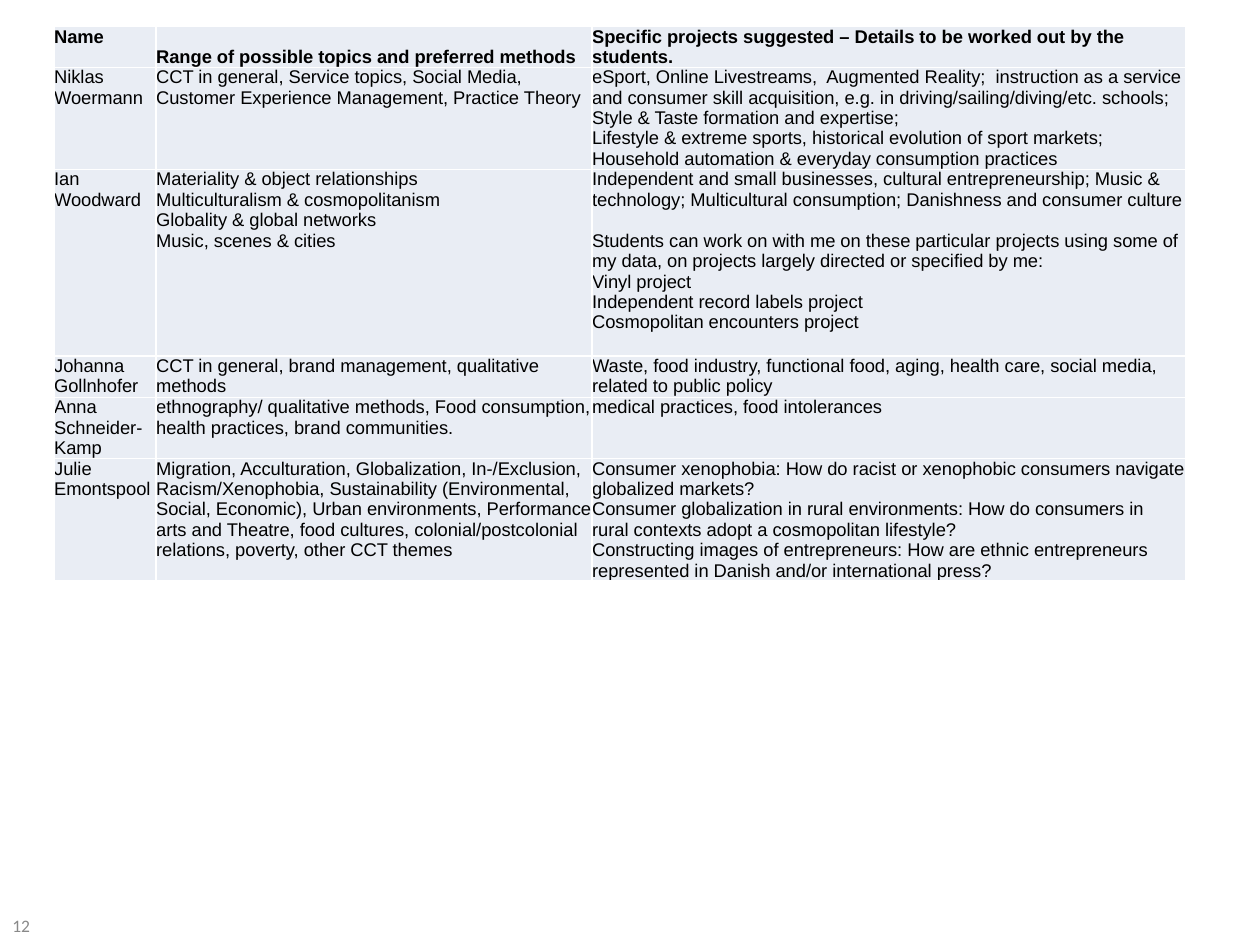
from lxml import etree
from pptx import Presentation
from pptx import util as u
from pptx.dml import color
from pptx.enum import text
from pptx.oxml import ns

COLORS = {"cell": "E9EDF4", "border": "FFFFFF", "text": "000000", "number": "898989"}
COLUMN_WIDTHS = [0.81, 3.46, 4.71]
ROW_HEIGHTS = [0.32, 0.81, 1.48, 0.33, 0.48, 0.97]
ROWS = [
    ("Name",
     "Range of possible topics and preferred methods",
     "Specific projects suggested – Details to be worked out by the students."),
    ("Niklas Woermann",
     "CCT in general, Service topics, Social Media,\v"
     "Customer Experience Management, Practice Theory",
     "eSport, Online Livestreams,  Augmented Reality;  instruction as a service and consumer "
     "skill acquisition, e.g. in driving/sailing/diving/etc. schools;  Style & Taste formation "
     "and expertise;\v"
     "Lifestyle & extreme sports, historical evolution of sport markets;\v"
     "Household automation & everyday consumption practices"),
    ("Ian Woodward",
     "Materiality & object relationships\vMulticulturalism & cosmopolitanism\v"
     "Globality & global networks\vMusic, scenes & cities",
     "Independent and small businesses, cultural entrepreneurship; Music & technology; "
     "Multicultural consumption; Danishness and consumer culture\n"
     "Students can work on with me on these particular projects using some of my data, "
     "on projects largely directed or specified by me:\v"
     "Vinyl project\vIndependent record labels project\vCosmopolitan encounters project"),
    ("Johanna Gollnhofer",
     "CCT in general, brand management, qualitative methods",
     "Waste, food industry, functional food, aging, health care, social media, "
     "related to public policy"),
    ("Anna Schneider-Kamp",
     "ethnography/ qualitative methods, Food consumption, health practices, brand communities.",
     "medical practices, food intolerances"),
    ("Julie Emontspool",
     "Migration, Acculturation, Globalization, In-/Exclusion, Racism/Xenophobia, Sustainability "
     "(Environmental, Social, Economic), Urban environments, Performance arts and Theatre, food "
     "cultures, colonial/postcolonial relations, poverty, other CCT themes",
     "Consumer xenophobia: How do racist or xenophobic consumers navigate globalized markets?\v"
     "Consumer globalization in rural environments: How do consumers in rural contexts adopt "
     "a cosmopolitan lifestyle?\v"
     "Constructing images of entrepreneurs: How are ethnic entrepreneurs represented in Danish "
     "and/or international press?"),
]


def add_run(paragraph, words, font_name, size, color_name, bold=False):
    run = paragraph.add_run()
    run.text = words
    run.font.name = font_name
    run.font.size = u.Pt(size)
    run.font.bold = bold
    run.font.color.rgb = color.RGBColor.from_string(COLORS[color_name])


def add_borders(cell):
    properties = cell._tc.get_or_add_tcPr()
    for side in ("lnL", "lnR", "lnT", "lnB"):
        line = etree.SubElement(properties, ns.qn(f"a:{side}"), w=str(u.Pt(1)))
        fill = etree.SubElement(line, ns.qn("a:solidFill"))
        etree.SubElement(fill, ns.qn("a:srgbClr"), val=COLORS["border"])


presentation = Presentation()
presentation.slide_width = u.Inches(10)
presentation.slide_height = u.Inches(7.5)
slide = presentation.slides.add_slide(presentation.slide_layouts[6])

table = slide.shapes.add_table(
    len(ROWS), len(COLUMN_WIDTHS), u.Inches(0.43), u.Inches(0.21),
    u.Inches(sum(COLUMN_WIDTHS)), u.Inches(sum(ROW_HEIGHTS))).table
for column, width in zip(table.columns, COLUMN_WIDTHS):
    column.width = u.Inches(width)

for row_index, (row, height, contents) in enumerate(zip(table.rows, ROW_HEIGHTS, ROWS)):
    row.height = u.Inches(height)
    is_header = row_index == 0
    for column_index, (cell, content) in enumerate(zip(row.cells, contents)):
        cell.margin_left = cell.margin_right = cell.margin_top = cell.margin_bottom = 0
        bottom = is_header and column_index > 0
        cell.vertical_anchor = text.MSO_ANCHOR.BOTTOM if bottom else text.MSO_ANCHOR.TOP
        add_borders(cell)
        cell.fill.solid()
        cell.fill.fore_color.rgb = color.RGBColor.from_string(COLORS["cell"])
        for block_index, block in enumerate(content.split("\n")):
            if block_index == 0:
                paragraph = cell.text_frame.paragraphs[0]
            else:
                paragraph = cell.text_frame.add_paragraph()
                paragraph.space_before = u.Pt(11.75)
            for line_index, words in enumerate(block.split("\v")):
                if line_index > 0:
                    paragraph.add_line_break()
                add_run(paragraph, words, "Arial", 10.5, "text", is_header)

number_box = slide.shapes.add_textbox(
    u.Inches(0), u.Inches(7.19), u.Inches(0.47), u.Inches(0.31))
number_box.text_frame.word_wrap = True
number_box.text_frame.vertical_anchor = text.MSO_ANCHOR.MIDDLE
add_run(number_box.text_frame.paragraphs[0], "12", "Calibri", 10, "number")

presentation.save("out.pptx")
